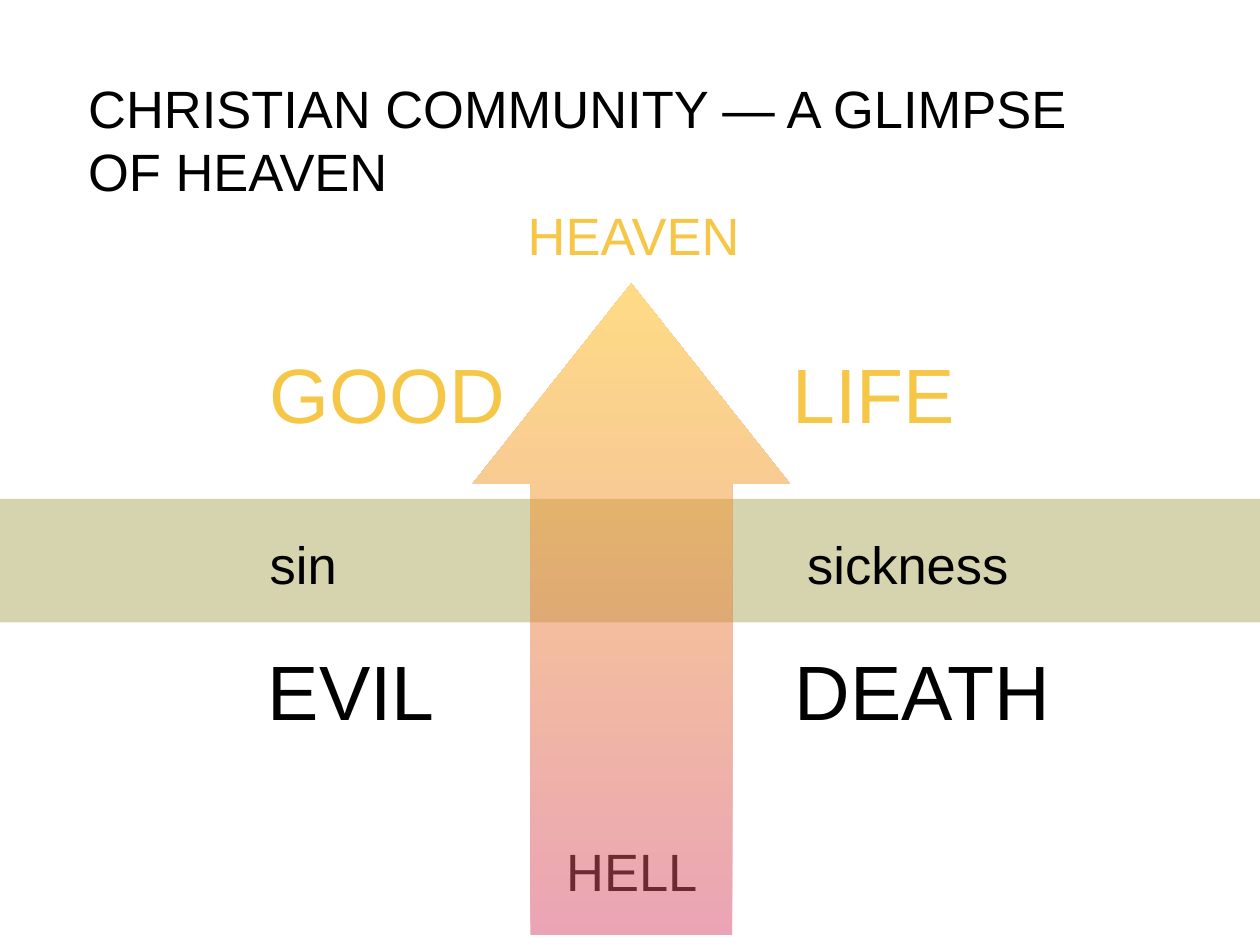
"""Build the slide of an arrow rising from hell to heaven across a band of sin and sickness."""
from dataclasses import dataclass

from lxml import etree
from pptx import Presentation
from pptx.dml.color import RGBColor
from pptx.enum.shapes import MSO_SHAPE
from pptx.enum.text import MSO_ANCHOR, MSO_AUTO_SIZE, PP_ALIGN
from pptx.oxml.ns import qn
from pptx.util import Inches, Pt

LEFT, CENTER, RIGHT = PP_ALIGN.LEFT, PP_ALIGN.CENTER, PP_ALIGN.RIGHT
MIDDLE, BOTTOM = MSO_ANCHOR.MIDDLE, MSO_ANCHOR.BOTTOM
NO_AUTOSIZE = MSO_AUTO_SIZE.NONE
RECTANGLE = MSO_SHAPE.RECTANGLE

FONT = "Arial"
GOLD, BLACK, OLIVE, ROSE, AMBER = "F6C646", "000000", "D5D4AE", "D74A6C", "FFB90C"
LARGE, SMALL = 44, 30
LABEL_HEIGHTS = {LARGE: 0.76, SMALL: 0.53}


@dataclass(frozen=True)
class Label:
    text: str
    left: float
    top: float
    width: float
    size: int
    color: str = BLACK
    alignment: PP_ALIGN = CENTER


OUTER_LABELS = [
    Label("GOOD", 1.44, 2.72, 2.57, LARGE, GOLD, RIGHT),
    Label("LIFE", 6.29, 2.72, 2.36, LARGE, GOLD, LEFT),
    Label("EVIL", 1.61, 5.08, 2.36, LARGE),
    Label("DEATH", 6.31, 5.08, 2.36, LARGE, alignment=LEFT),
    Label("HEAVEN", 3.76, 1.58, 2.54, SMALL, GOLD),
    Label("HELL", 3.73, 6.63, 2.57, SMALL),
]
BAND_LABELS = [
    Label("sickness", 6.24, 4.19, 1.93, SMALL),
    Label("sin", 2.14, 4.19, 1.96, SMALL, alignment=LEFT),
]
ARROW_POINTS = [
    (5.01, 2.25), (3.75, 3.84), (4.21, 3.84), (4.21, 7.42),
    (5.81, 7.42), (5.81, 3.84), (6.27, 3.84),
]


def rgb(color: str) -> RGBColor:
    return RGBColor.from_string(color)


def format_text(frame, text: str, size: int, color: str, alignment: PP_ALIGN) -> None:
    frame.auto_size = NO_AUTOSIZE
    frame.word_wrap = True
    frame.text = text
    paragraph = frame.paragraphs[0]
    paragraph.alignment = alignment
    paragraph.font.name = FONT
    paragraph.font.size = Pt(size)
    paragraph.font.color.rgb = rgb(color)


def add_title(slide, text: str) -> None:
    title = slide.shapes.title
    title.left, title.top = Inches(0.65), Inches(0.51)
    title.width, title.height = Inches(8.4), Inches(1.19)
    frame = title.text_frame
    frame.vertical_anchor = MIDDLE
    frame.margin_left = frame.margin_right = Inches(0.05)
    frame.margin_top = frame.margin_bottom = Inches(0.05)
    format_text(frame, text, SMALL, BLACK, LEFT)


def add_label(slide, label: Label) -> None:
    box = slide.shapes.add_textbox(
        Inches(label.left), Inches(label.top),
        Inches(label.width), Inches(LABEL_HEIGHTS[label.size]))
    frame = box.text_frame
    frame.margin_left = frame.margin_right = 0
    frame.margin_top = frame.margin_bottom = 0
    frame.vertical_anchor = BOTTOM
    format_text(frame, label.text, label.size, label.color, label.alignment)


def add_band(slide) -> None:
    band = slide.shapes.add_shape(
        RECTANGLE, Inches(-0.07), Inches(3.96), Inches(10.13), Inches(0.98))
    band.shadow.inherit = False
    band.fill.solid()
    band.fill.fore_color.rgb = rgb(OLIVE)
    band.line.fill.background()


def add_arrow(slide) -> None:
    points = [(Inches(x), Inches(y)) for x, y in ARROW_POINTS]
    builder = slide.shapes.build_freeform(*points[0])
    builder.add_line_segments(points[1:], close=True)
    arrow = builder.convert_to_shape()
    arrow.shadow.inherit = False
    arrow.line.fill.background()
    arrow.fill.gradient()
    arrow.fill.gradient_angle = 90
    for stop, position, color in zip(arrow.fill.gradient_stops, (0, 1), (ROSE, AMBER)):
        stop.position = position
        stop.color.rgb = rgb(color)
    for color_element in arrow._element.spPr.iter(qn("a:srgbClr")):
        etree.SubElement(color_element, qn("a:alpha"), val="50000")


def main() -> None:
    presentation = Presentation()
    presentation.slide_width, presentation.slide_height = Inches(10), Inches(7.5)
    slide = presentation.slides.add_slide(presentation.slide_layouts[0])
    subtitle = slide.placeholders[1].element
    subtitle.getparent().remove(subtitle)

    add_title(slide, "CHRISTIAN COMMUNITY — A GLIMPSE OF HEAVEN")
    for label in OUTER_LABELS:
        add_label(slide, label)
    add_band(slide)
    for label in BAND_LABELS:
        add_label(slide, label)
    add_arrow(slide)
    presentation.save("out.pptx")


if __name__ == "__main__":
    main()
